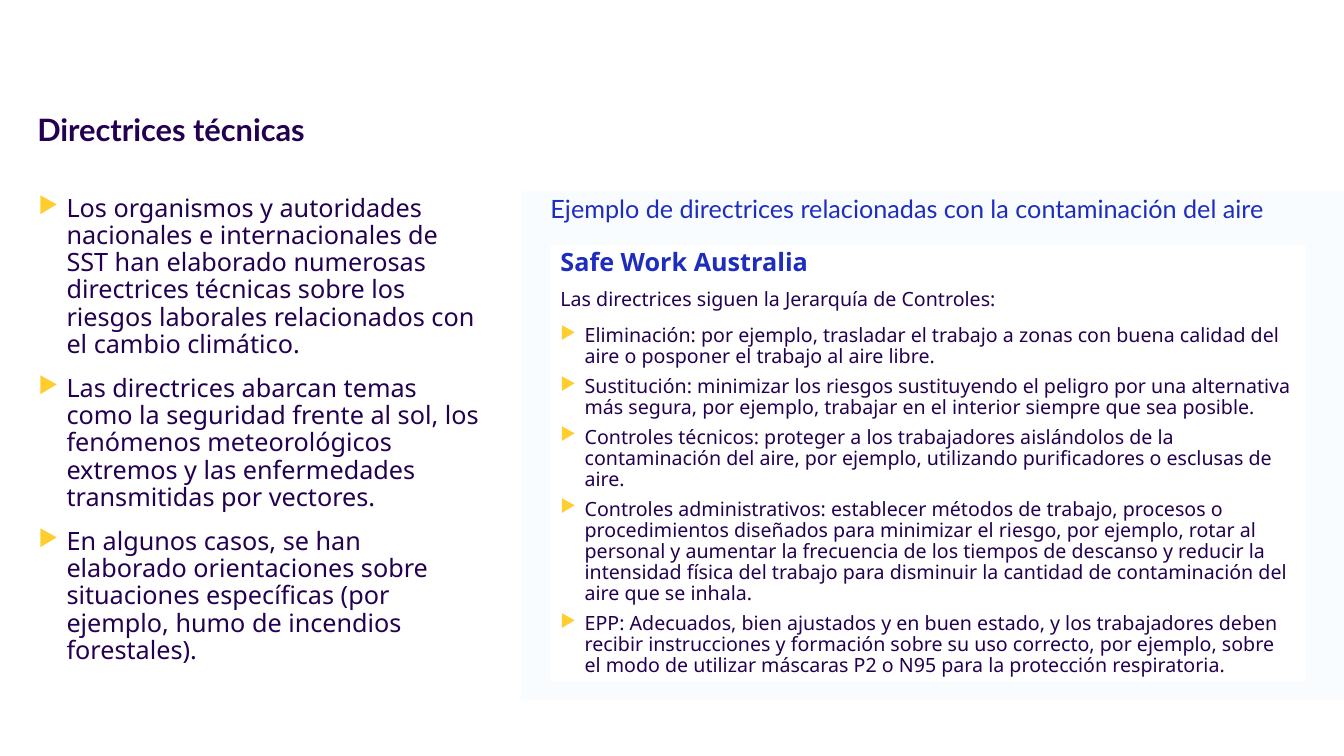
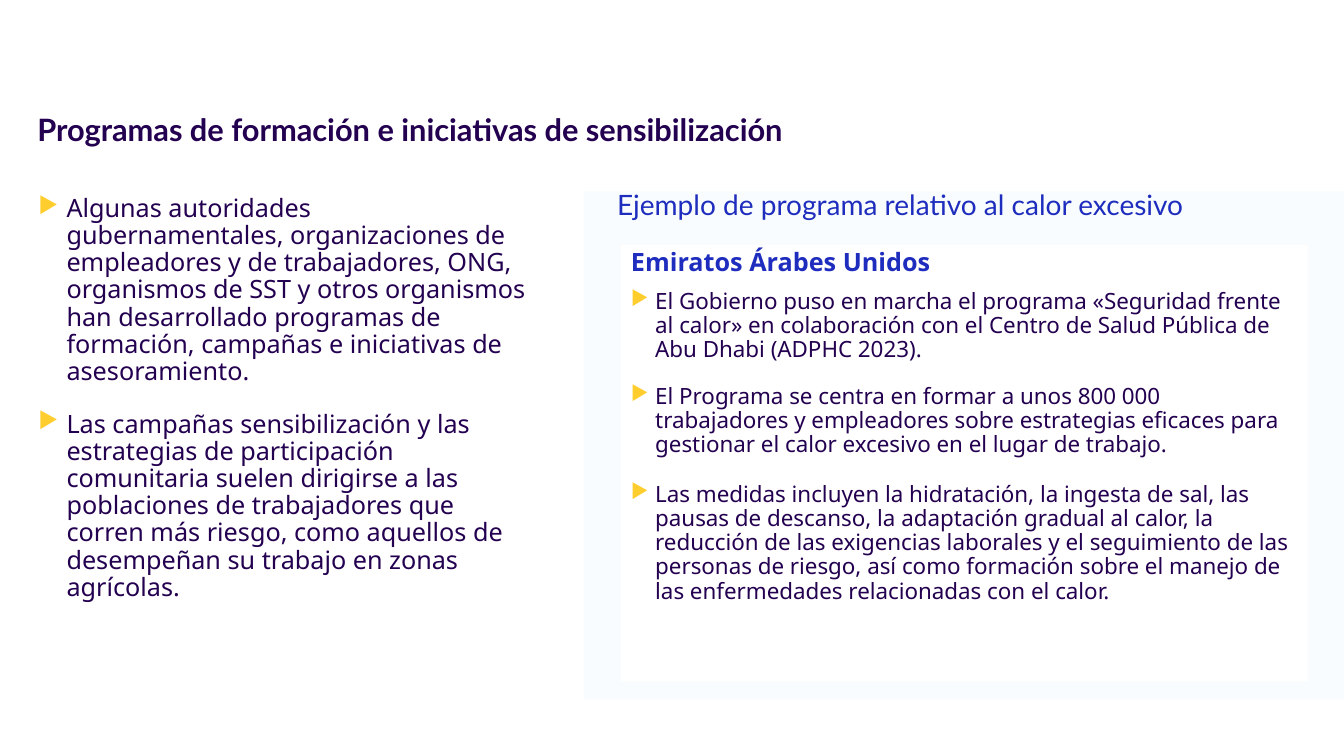
from lxml import etree
from pptx import Presentation
from pptx.dml.color import RGBColor
from pptx.enum import shapes, text
from pptx.oxml import ns
from pptx.util import Inches, Pt

# Shared style
PURPLE = RGBColor(0x23, 0x00, 0x50)
BLUE = RGBColor(0x1E, 0x2D, 0xBE)
YELLOW = RGBColor(0xFF, 0xCD, 0x2D)
PALE_BLUE = RGBColor(0xF8, 0xFC, 0xFE)
WHITE = RGBColor(0xFF, 0xFF, 0xFF)
HEADING_FONT, BODY_FONT = "Lato", "Noto Sans"
SLIDE_WIDTH = 13.33
PANEL_TOP, PANEL_HEIGHT = 1.9, 5.04
CARD_TOP, CARD_HEIGHT = 2.43, 4.33

# Content: bullets in the card are (text, space before, space after)
SLIDES = [
    {
        "title": "Directrices técnicas",
        "points": [
            "Los organismos y autoridades nacionales e internacionales de SST han elaborado numerosas directrices técnicas sobre los riesgos laborales relacionados con el cambio climático.",
            "Las directrices abarcan temas como la seguridad frente al sol, los fenómenos meteorológicos extremos y las enfermedades transmitidas por vectores.",
            "En algunos casos, se han elaborado orientaciones sobre situaciones específicas (por ejemplo, humo de incendios forestales).",
        ],
        "points_width": 4.41,
        "points_after": 6,
        "panel_left": 5.17,
        "heading": "Ejemplo de directrices relacionadas con la contaminación del aire",
        "heading_size": 18,
        "heading_inset": (0.29, 0.05),
        "card_left": 5.46,
        "card_width": 7.49,
        "card_title": "Safe Work Australia",
        "card_intro": "Las directrices siguen la Jerarquía de Controles:",
        "card_size": 14,
        "card_bullets": [
            ("Eliminación: por ejemplo, trasladar el trabajo a zonas con buena calidad del aire o posponer el trabajo al aire libre.", 6, 0),
            ("Sustitución: minimizar los riesgos sustituyendo el peligro por una alternativa más segura, por ejemplo, trabajar en el interior siempre que sea posible.", 6, 0),
            ("Controles técnicos: proteger a los trabajadores aislándolos de la contaminación del aire, por ejemplo, utilizando purificadores o esclusas de aire.", 6, 0),
            ("Controles administrativos: establecer métodos de trabajo, procesos o procedimientos diseñados para minimizar el riesgo, por ejemplo, rotar al personal y aumentar la frecuencia de los tiempos de descanso y reducir la intensidad física del trabajo para disminuir la cantidad de contaminación del aire que se inhala.", 6, 0),
            ("EPP: Adecuados, bien ajustados y en buen estado, y los trabajadores deben recibir instrucciones y formación sobre su uso correcto, por ejemplo, sobre el modo de utilizar máscaras P2 o N95 para la protección respiratoria.", 6, 0),
        ],
    },
    {
        "title": "Programas de formación e iniciativas de sensibilización",
        "points": [
            "Algunas autoridades gubernamentales, organizaciones de empleadores y de trabajadores, ONG, organismos de SST y otros organismos han desarrollado programas de formación, campañas e iniciativas de asesoramiento.",
            "Las campañas sensibilización y las estrategias de participación comunitaria suelen dirigirse a las poblaciones de trabajadores que corren más riesgo, como aquellos de desempeñan su trabajo en zonas agrícolas.",
        ],
        "points_width": 4.89,
        "points_after": 12,
        "panel_left": 5.79,
        "heading": "Ejemplo de programa relativo al calor excesivo",
        "heading_size": 20,
        "heading_inset": (0.33, 0),
        "card_left": 6.16,
        "card_width": 6.81,
        "card_title": "Emiratos Árabes Unidos",
        "card_intro": None,
        "card_size": 16,
        "card_bullets": [
            ("El Gobierno puso en marcha el programa «Seguridad frente al calor» en colaboración con el Centro de Salud Pública de Abu Dhabi (ADPHC 2023).", 4.5, 4.5),
            ("El Programa se centra en formar a unos 800 000 trabajadores y empleadores sobre estrategias eficaces para gestionar el calor excesivo en el lugar de trabajo.", 12, 6),
            ("Las medidas incluyen la hidratación, la ingesta de sal, las pausas de descanso, la adaptación gradual al calor, la reducción de las exigencias laborales y el seguimiento de las personas de riesgo, así como formación sobre el manejo de las enfermedades relacionadas con el calor.", 12, 6),
        ],
    },
]


def add_frame(slide, left, top, width, height, fill=None, insets=(0, 0, 0, 0)):
    """Add a text box, or a filled rectangle, and return its text frame."""
    box = [Inches(length) for length in (left, top, width, height)]
    if fill is None:
        shape = slide.shapes.add_textbox(*box)
    else:
        shape = slide.shapes.add_shape(shapes.MSO_SHAPE.RECTANGLE, *box)
        shape.shadow.inherit = False
        shape.fill.solid()
        shape.fill.fore_color.rgb = fill
        shape.line.fill.background()
    frame = shape.text_frame
    frame.word_wrap = True
    frame.vertical_anchor = text.MSO_ANCHOR.TOP
    (frame.margin_left, frame.margin_top,
     frame.margin_right, frame.margin_bottom) = [Inches(inset) for inset in insets]
    return frame


def write(frame, words, size, color=PURPLE, font=BODY_FONT, bold=False,
          before=0, after=0, bullet_indent=None):
    """Append a paragraph, with an arrow bullet if an indent is given."""
    paragraph = frame.paragraphs[0]
    if paragraph.runs:
        paragraph = frame.add_paragraph()
    else:
        before = 0
    paragraph.alignment = text.PP_ALIGN.LEFT
    paragraph.line_spacing = 0.9
    paragraph.space_before, paragraph.space_after = Pt(before), Pt(after)
    if bullet_indent:
        properties = paragraph._p.get_or_add_pPr()
        properties.set("marL", str(Inches(bullet_indent)))
        properties.set("indent", str(-Inches(bullet_indent)))
        bullet_color = etree.SubElement(properties, ns.qn("a:buClr"))
        etree.SubElement(bullet_color, ns.qn("a:srgbClr"), val=str(YELLOW))
        etree.SubElement(properties, ns.qn("a:buSzPct"), val="90000")
        etree.SubElement(properties, ns.qn("a:buChar"), char="▶")
    run = paragraph.add_run()
    run.text = words
    run.font.name, run.font.size, run.font.bold = font, Pt(size), bold
    run.font.color.rgb = color


presentation = Presentation()
presentation.slide_width, presentation.slide_height = Inches(SLIDE_WIDTH), Inches(7.5)

for content in SLIDES:
    slide = presentation.slides.add_slide(presentation.slide_layouts[6])

    # Title
    title = add_frame(slide, 0.37, 1.14, 12.6, 0.55)
    write(title, content["title"], 22, font=HEADING_FONT, bold=True)

    # Main points on the left
    points = add_frame(slide, 0.38, 1.94, content["points_width"], 5.04)
    for point in content["points"]:
        write(points, point, 18, before=6, after=content["points_after"], bullet_indent=0.28)

    # Example panel, running to the right edge
    panel_left = content["panel_left"]
    panel = add_frame(slide, panel_left, PANEL_TOP, SLIDE_WIDTH - panel_left, PANEL_HEIGHT,
                      fill=PALE_BLUE, insets=(*content["heading_inset"], 0, 0))
    write(panel, content["heading"], content["heading_size"], color=BLUE, font=HEADING_FONT)

    # White card with the example
    card = add_frame(slide, content["card_left"], CARD_TOP, content["card_width"], CARD_HEIGHT,
                     fill=WHITE, insets=(0.1, 0.05, 0.1, 0.05))
    write(card, content["card_title"], 18, color=BLUE, bold=True, after=4.5)
    if content["card_intro"]:
        write(card, content["card_intro"], content["card_size"], before=4.5, after=4.5)
    for words, before, after in content["card_bullets"]:
        write(card, words, content["card_size"], before=before, after=after, bullet_indent=0.24)

presentation.save("out.pptx")
